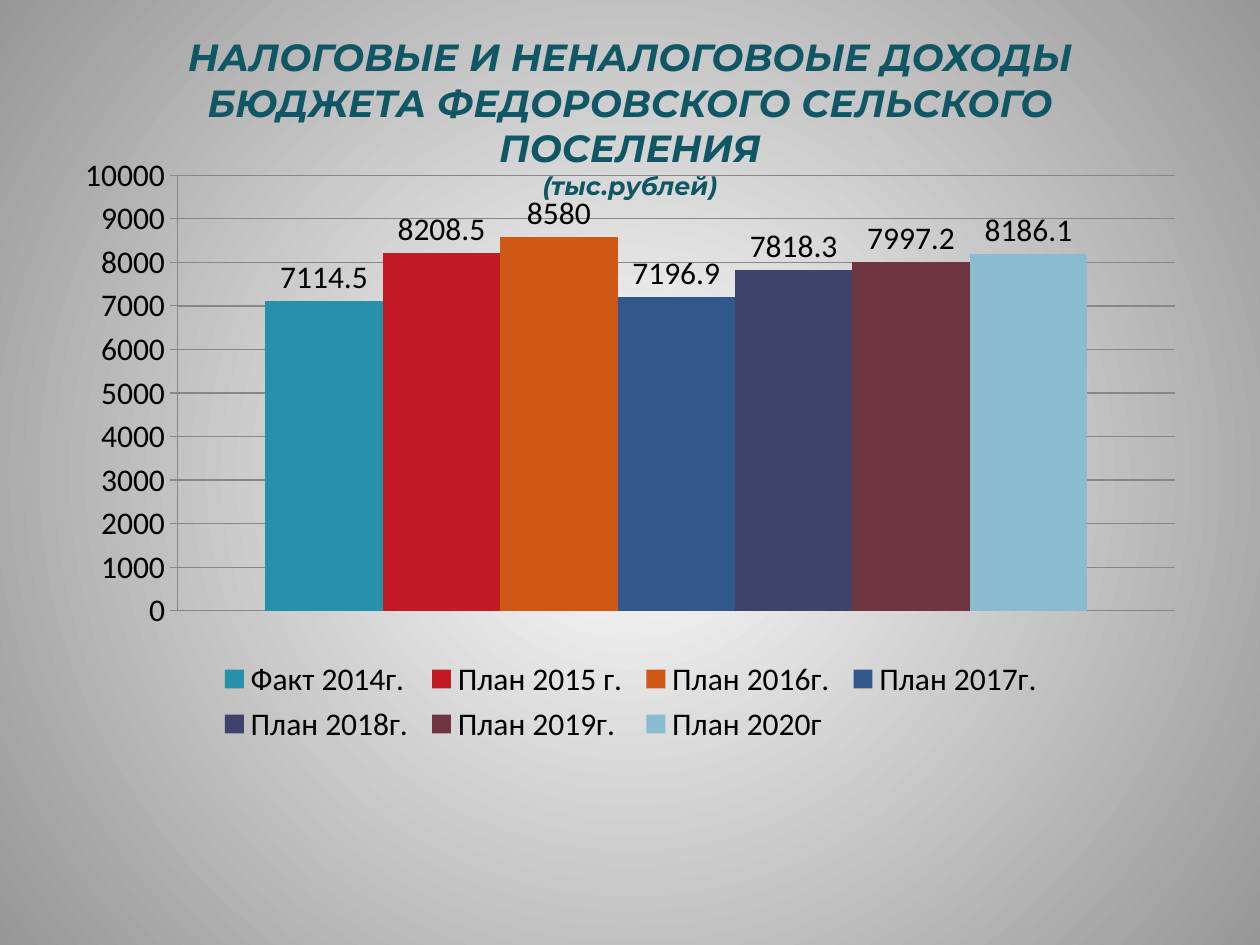
from pptx import Presentation
from pptx.chart.data import CategoryChartData
from pptx.dml.color import RGBColor
from pptx.enum.chart import XL_CHART_TYPE, XL_LABEL_POSITION, XL_LEGEND_POSITION, XL_TICK_MARK
from pptx.enum.text import MSO_ANCHOR, PP_ALIGN
from pptx.oxml import parse_xml
from pptx.oxml.ns import nsdecls
from pptx.util import Pt

COLUMN = XL_CHART_TYPE.COLUMN_CLUSTERED
OUTSIDE_END = XL_LABEL_POSITION.OUTSIDE_END
BOTTOM = XL_LEGEND_POSITION.BOTTOM
CROSS = XL_TICK_MARK.CROSS
MIDDLE = MSO_ANCHOR.MIDDLE
CENTER = PP_ALIGN.CENTER

PX = 914400 // 126
TEAL = RGBColor(0x10, 0x57, 0x66)
BLACK = RGBColor(0x00, 0x00, 0x00)
GRID = RGBColor(0x87, 0x87, 0x87)

# Series name, value and column colour
INCOME = [
    ("Факт 2014г.", 7114.5, RGBColor(0x27, 0x90, 0xAB)),
    ("План 2015 г.", 8208.5, RGBColor(0xC1, 0x1B, 0x23)),
    ("План 2016г.", 8580, RGBColor(0xD0, 0x58, 0x17)),
    ("План 2017г.", 7196.9, RGBColor(0x31, 0x58, 0x8B)),
    ("План 2018г.", 7818.3, RGBColor(0x3F, 0x42, 0x6A)),
    ("План 2019г.", 7997.2, RGBColor(0x6F, 0x35, 0x41)),
    ("План 2020г", 8186.1, RGBColor(0x8A, 0xBC, 0xCF)),
]


def set_background(s):
    """Radial gradient, white in the centre."""
    s.background.fill.solid()
    bg_pr = s.background.fill._xPr
    bg_pr.replace(bg_pr[0], parse_xml(
        f'<a:gradFill rotWithShape="1" {nsdecls("a")}><a:gsLst>'
        '<a:gs pos="0"><a:srgbClr val="FFFFFF"/></a:gs>'
        '<a:gs pos="100000"><a:srgbClr val="979797"/></a:gs></a:gsLst>'
        '<a:path path="circle"><a:fillToRect l="50000" t="50000" r="50000" b="50000"/>'
        '</a:path></a:gradFill>'))


def add_title(s, x, y, w, h):
    tf = s.shapes.add_textbox(x * PX, y * PX, w * PX, h * PX).text_frame
    tf.word_wrap = True
    tf.vertical_anchor = MIDDLE
    p = tf.paragraphs[0]
    p.alignment = CENTER
    p.font.name = "Montserrat"
    p.font.bold = p.font.italic = True
    p.font.color.rgb = TEAL
    r = p.add_run()
    r.text = "НАЛОГОВЫЕ И НЕНАЛОГОВОЫЕ ДОХОДЫ БЮДЖЕТА ФЕДОРОВСКОГО СЕЛЬСКОГО ПОСЕЛЕНИЯ"
    r.font.size = Pt(21.6)
    p.add_line_break()
    r = p.add_run()
    r.text = "(тыс.рублей)"
    r.font.size = Pt(14.4)


def manual_layout(x, y, w, h, target=""):
    """Place a chart part by fractions of the chart area."""
    return parse_xml(
        f'<c:layout {nsdecls("c")}><c:manualLayout>{target}'
        '<c:xMode val="edge"/><c:yMode val="edge"/>'
        f'<c:x val="{x}"/><c:y val="{y}"/><c:w val="{w}"/><c:h val="{h}"/>'
        '</c:manualLayout></c:layout>')


def add_income_chart(s, x, y, w, h):
    data = CategoryChartData()
    data.categories = ["1"]
    for name, value, _ in INCOME:
        data.add_series(name, [value])
    chart = s.shapes.add_chart(COLUMN, x * PX, y * PX, w * PX, h * PX, data).chart
    chart.has_title = False
    chart.font.name = "Calibri"
    chart.font.size = Pt(18)
    chart.font.color.rgb = BLACK

    # Columns and their value labels
    plot = chart.plots[0]
    plot.vary_by_categories = False
    plot.gap_width = 150
    plot.overlap = 0
    for series, (_, _, color) in zip(plot.series, INCOME):
        series.format.fill.solid()
        series.format.fill.fore_color.rgb = color
        series.data_labels.show_value = True
        series.data_labels.position = OUTSIDE_END

    # Axes
    chart.category_axis.visible = False
    axis = chart.value_axis
    axis.minimum_scale, axis.maximum_scale, axis.major_unit = 0, 10000, 1000
    axis.major_tick_mark = CROSS
    axis.has_major_gridlines = True
    for line in (axis.format.line, axis.major_gridlines.format.line):
        line.color.rgb = GRID
        line.width = Pt(0.75)

    # Legend under the plot
    chart.has_legend = True
    legend = chart.legend
    legend.position = BOTTOM
    legend.include_in_layout = False
    legend._element.legendPos.addnext(manual_layout(0.13, 0.84, 0.74, 0.16))

    plot_area = chart._chartSpace.chart.plotArea
    for old in plot_area.findall("{*}layout"):
        plot_area.remove(old)
    plot_area.insert(0, manual_layout(0.1, 0.05, 0.88, 0.72, '<c:layoutTarget val="inner"/>'))


def main():
    prs = Presentation()
    prs.slide_width, prs.slide_height = 1260 * PX, 945 * PX
    s = prs.slides.add_slide(prs.slide_layouts[6])
    set_background(s)
    add_title(s, 63, 38, 1134, 158)
    add_income_chart(s, 64, 145, 1134, 605)
    prs.save("out.pptx")


if __name__ == "__main__":
    main()
